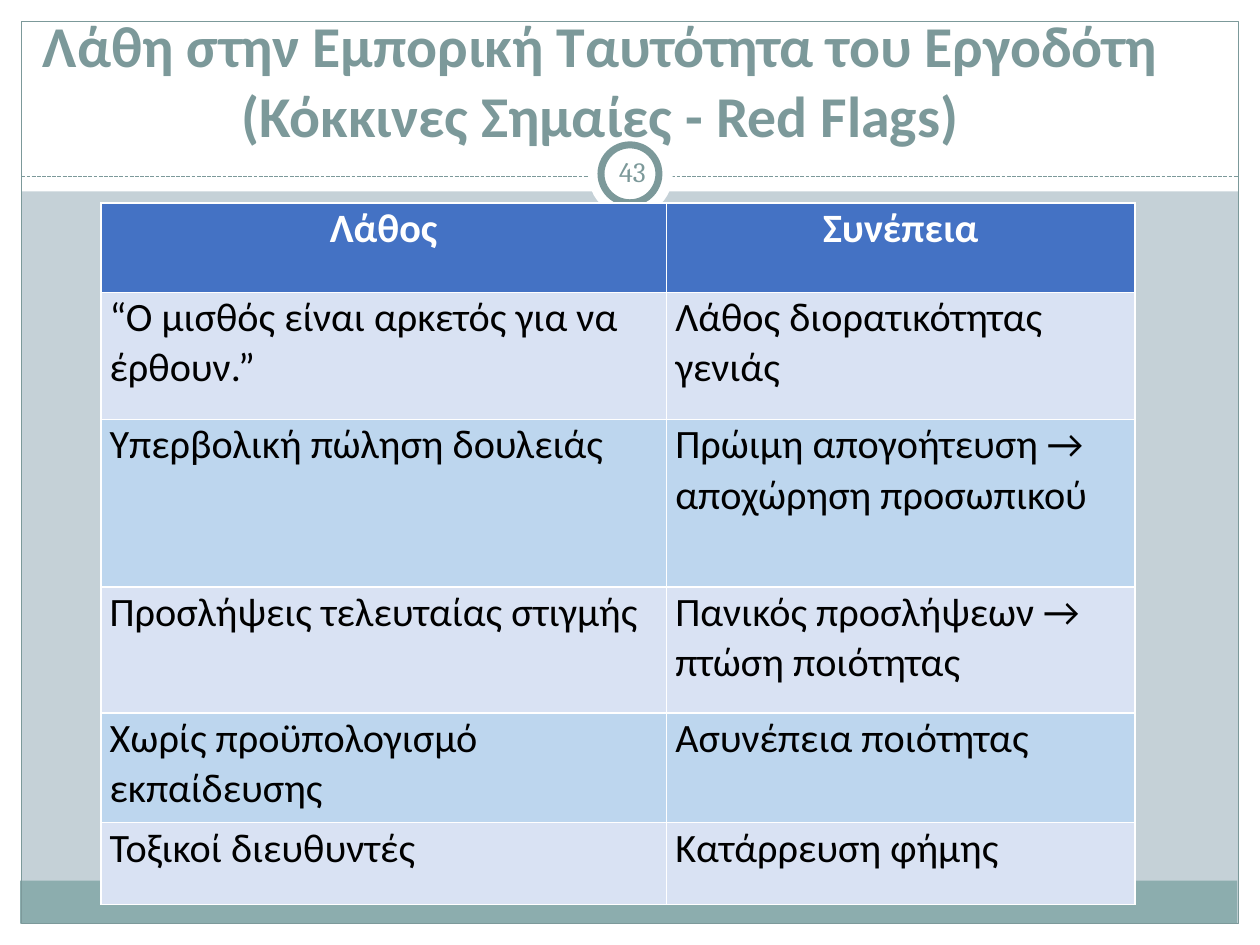
from lxml import etree
from pptx import Presentation
from pptx.dml.color import RGBColor
from pptx.enum import dml, shapes, text
from pptx.oxml import ns
from pptx.util import Inches, Pt

WHITE = RGBColor(0xFF, 0xFF, 0xFF)
BLACK = RGBColor(0, 0, 0)
BACKDROP = RGBColor(0xC5, 0xD1, 0xD7)
SAGE = RGBColor(0x7C, 0x99, 0x9A)
FOOTER = RGBColor(0x8C, 0xAD, 0xAE)
HEADER_BLUE = RGBColor(0x44, 0x72, 0xC4)
ROW_FILLS = (RGBColor(0xD9, 0xE2, 0xF3), RGBColor(0xBD, 0xD6, 0xEE))

TITLE = "Λάθη στην Εμπορική Ταυτότητα του Εργοδότη (Κόκκινες Σημαίες - Red Flags)"
PAGE_NUMBER = "43"
MISTAKES = [
    ("Λάθος", "Συνέπεια"),
    ("“Ο μισθός είναι αρκετός για να έρθουν.”", "Λάθος διορατικότητας γενιάς"),
    ("Υπερβολική πώληση δουλειάς", "Πρώιμη απογοήτευση → αποχώρηση προσωπικού"),
    ("Προσλήψεις τελευταίας στιγμής", "Πανικός προσλήψεων → πτώση ποιότητας"),
    ("Χωρίς προϋπολογισμό εκπαίδευσης", "Ασυνέπεια ποιότητας"),
    ("Τοξικοί διευθυντές", "Κατάρρευση φήμης"),
]
COLUMN_WIDTHS = (4.49, 3.72)
ROW_HEIGHTS = (0.71, 1.01, 1.33, 1, 0.87, 0.65)


def add_panel(slide, box, fill=None, line=None, weight=0.75,
              kind=shapes.MSO_SHAPE.RECTANGLE):
    panel = slide.shapes.add_shape(kind, *map(Inches, box))
    panel.shadow.inherit = False
    if fill is None:
        panel.fill.background()
    else:
        panel.fill.solid()
        panel.fill.fore_color.rgb = fill
    if line is None:
        panel.line.fill.background()
    else:
        panel.line.color.rgb = line
        panel.line.width = Pt(weight)


def add_divider(slide, left, right, y):
    divider = slide.shapes.add_connector(
        shapes.MSO_CONNECTOR.STRAIGHT, Inches(left), Inches(y), Inches(right), Inches(y))
    divider.line.color.rgb = SAGE
    divider.line.width = Pt(0.75)
    divider.line.dash_style = dml.MSO_LINE.SQUARE_DOT
    etree.SubElement(divider._element.spPr, ns.qn("a:effectLst"))


def write(paragraph, words, size, color, face="Calibri", bold=False, align=None):
    run = paragraph.add_run()
    run.text = words
    run.font.name = face
    run.font.size = Pt(size)
    run.font.bold = bold
    run.font.color.rgb = color
    paragraph.alignment = align


def add_frame(slide):
    # White margins and header band
    for box in ((0, 7.33, 10, 0.17), (0, 0, 10, 1.52),
                (0, 0, 0.17, 7.5), (9.83, 0, 0.17, 7.5)):
        add_panel(slide, box, fill=WHITE)
    # Footer band, outline and dashed divider
    add_panel(slide, (0.16, 6.99, 9.66, 0.34), fill=FOOTER)
    add_panel(slide, (0.17, 0.17, 9.66, 7.16), line=SAGE)
    add_divider(slide, 0.17, 9.83, 1.4)
    # Page number badge
    oval = shapes.MSO_SHAPE.OVAL
    add_panel(slide, (4.67, 1.05, 0.67, 0.67), fill=WHITE, kind=oval)
    add_panel(slide, (4.77, 1.15, 0.46, 0.46), fill=WHITE, line=SAGE, weight=4, kind=oval)


def place_title(slide):
    title = slide.shapes.title
    title.left, title.top, title.width, title.height = map(Inches, (0.1, 0.32, 9.33, 0.91))
    title.text_frame.vertical_anchor = text.MSO_ANCHOR.BOTTOM
    title.text_frame.auto_size = text.MSO_AUTO_SIZE.NONE
    write(title.text_frame.paragraphs[0], TITLE, 33, SAGE, bold=True,
          align=text.PP_ALIGN.CENTER)
    # Bring the title in front of the header band
    slide.shapes._spTree.append(title._element)


def add_page_number(slide):
    number = slide.shapes.add_textbox(*map(Inches, (4.77, 1.12, 0.5, 0.48)))
    frame = number.text_frame
    frame.word_wrap = True
    frame.vertical_anchor = text.MSO_ANCHOR.MIDDLE
    frame.margin_left = frame.margin_right = Inches(0.05)
    frame.margin_top = frame.margin_bottom = Inches(0.05)
    write(frame.paragraphs[0], PAGE_NUMBER, 16, SAGE, face="Cambria",
          align=text.PP_ALIGN.CENTER)


def add_cell_borders(cell):
    properties = cell._tc.get_or_add_tcPr()
    for position, side in enumerate(("lnL", "lnR", "lnT", "lnB")):
        border = etree.Element(ns.qn(f"a:{side}"), w=str(Pt(1)))
        solid = etree.SubElement(border, ns.qn("a:solidFill"))
        etree.SubElement(solid, ns.qn("a:srgbClr"), val=str(WHITE))
        properties.insert(position, border)


def fill_cell(cell, words, is_header, fill):
    cell.margin_left = cell.margin_right = Inches(0.07)
    cell.margin_top = cell.margin_bottom = 0
    cell.fill.solid()
    cell.fill.fore_color.rgb = fill
    add_cell_borders(cell)
    paragraph = cell.text_frame.paragraphs[0]
    paragraph.line_spacing = 1.02
    write(paragraph, words, 23, WHITE if is_header else BLACK, bold=is_header,
          align=text.PP_ALIGN.CENTER if is_header else text.PP_ALIGN.LEFT)


def add_mistakes_table(slide):
    table = slide.shapes.add_table(
        len(MISTAKES), len(COLUMN_WIDTHS), Inches(0.8), Inches(1.61),
        Inches(sum(COLUMN_WIDTHS)), Inches(sum(ROW_HEIGHTS))).table
    for column, width in zip(table.columns, COLUMN_WIDTHS):
        column.width = Inches(width)
    for index, (height, entries) in enumerate(zip(ROW_HEIGHTS, MISTAKES)):
        table.rows[index].height = Inches(height)
        is_header = index == 0
        fill = HEADER_BLUE if is_header else ROW_FILLS[(index - 1) % 2]
        for cell, words in zip(table.rows[index].cells, entries):
            fill_cell(cell, words, is_header, fill)


def main():
    deck = Presentation()
    deck.slide_width, deck.slide_height = Inches(10), Inches(7.5)
    slide = deck.slides.add_slide(deck.slide_layouts[5])
    slide.background.fill.solid()
    slide.background.fill.fore_color.rgb = BACKDROP
    add_frame(slide)
    place_title(slide)
    add_page_number(slide)
    add_mistakes_table(slide)
    deck.save("out.pptx")


if __name__ == "__main__":
    main()
